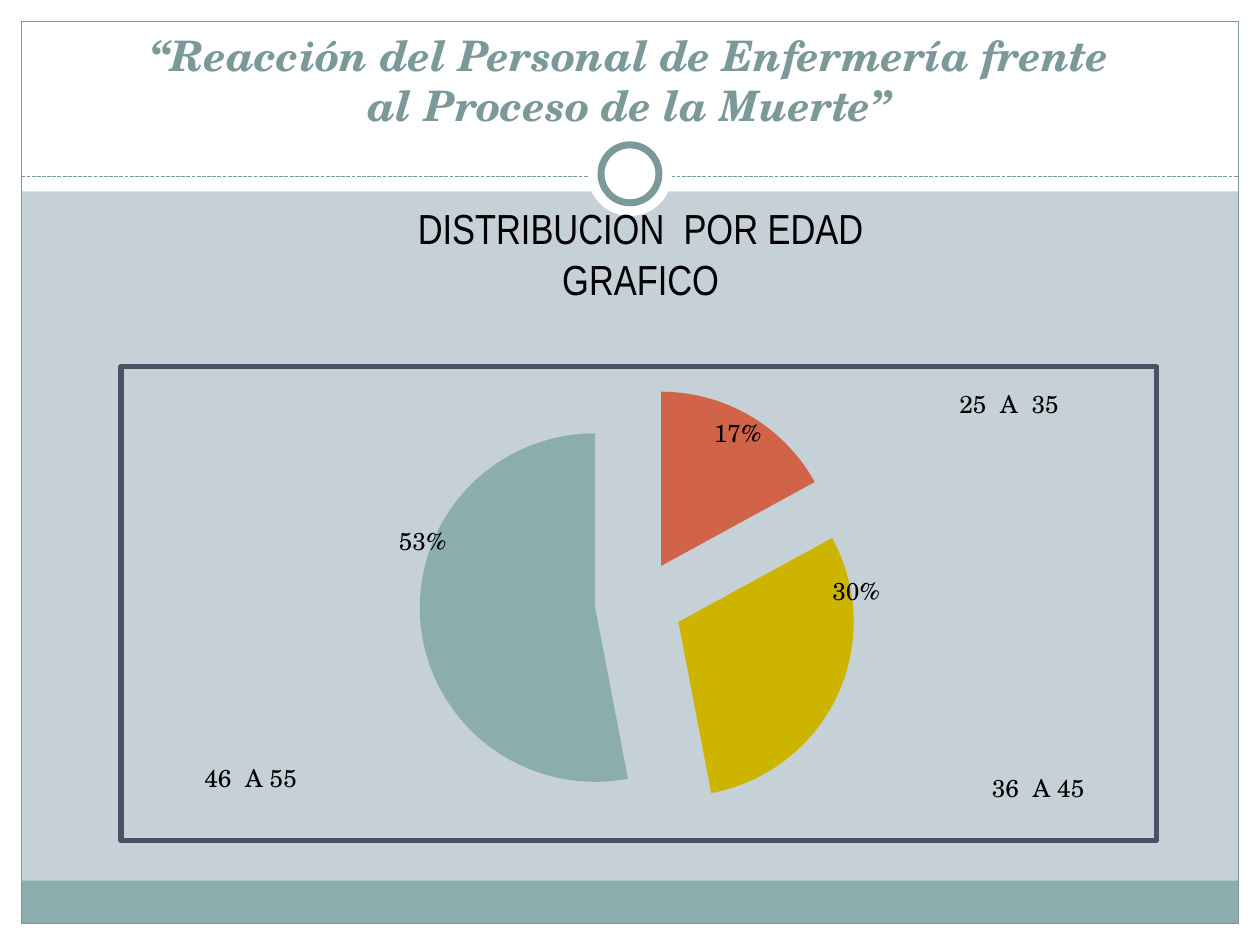
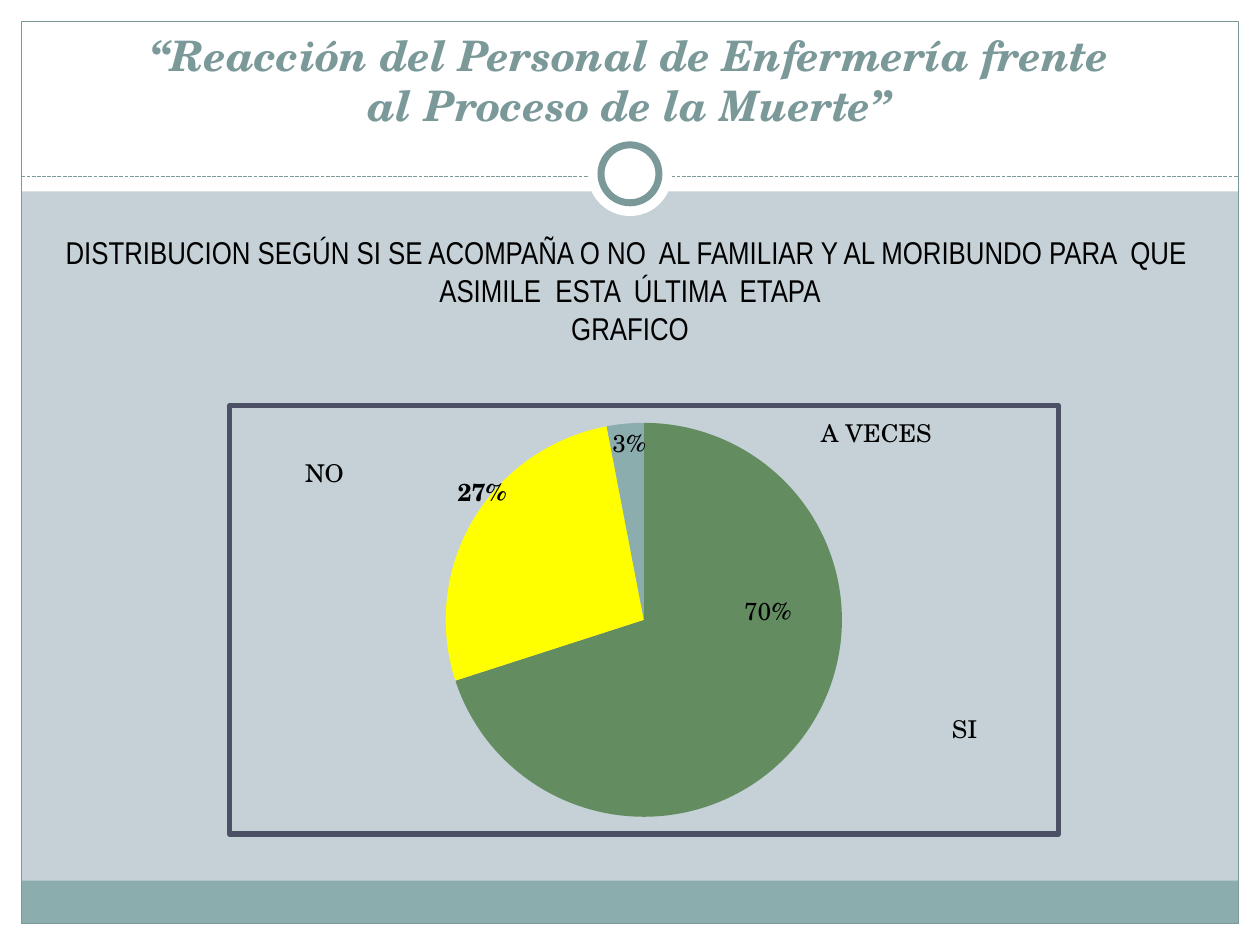
import pptx
import pptx.util
import pptx.chart.data
import pptx.dml.color
import pptx.enum.chart
import pptx.enum.dml
import pptx.enum.shapes
import pptx.enum.text
import pptx.oxml
import pptx.oxml.ns
from dataclasses import dataclass

Inches = pptx.util.Inches
Pt = pptx.util.Pt
qn = pptx.oxml.ns.qn
Kind = pptx.enum.shapes.MSO_SHAPE
Anchor = pptx.enum.text.MSO_ANCHOR

# Content: label entries are (text, left, top, width, bold)
TITLE = "“Reacción del Personal de Enfermería frente\val Proceso de la Muerte”"
SLIDES = [
    {
        "head": ["DISTRIBUCION  POR EDAD", "GRAFICO"],
        "box": (1.02, 1.56, 8.13, 0.91),
        "size": 24,
        "frame": (0.94, 2.89, 8.26, 3.8),
        "parts": [(17, "D16349"), (30, "CCB400"), (53, "8CADAE")],
        "burst": 25,
        "labels": [
            ("53%", 2.73, 4.06, 1.25, False),
            ("30%", 6.17, 4.45, 1.25, False),
            ("17%", 5.23, 3.2, 1.25, False),
            ("25  A  35", 7.11, 2.97, 1.8, False),
            ("36  A 45", 7.34, 6.02, 1.8, False),
            ("46  A 55", 1.09, 5.94, 1.8, False),
        ],
    },
    {
        "head": ["DISTRIBUCION SEGÚN SI SE ACOMPAÑA O NO  AL FAMILIAR Y AL "
                 "MORIBUNDO PARA  QUE  ASIMILE  ESTA  ÚLTIMA  ETAPA", "GRAFICO"],
        "box": (0.39, 1.8, 9.22, 1.01),
        "size": 18,
        "frame": (1.8, 3.2, 6.62, 3.44),
        "parts": [(70, "648C61"), (27, "FFFF00"), (3, "8CADAE")],
        "burst": 0,
        "labels": [
            ("70%", 5.55, 4.61, 1.09, False),
            ("27%", 3.28, 3.67, 1.09, True),
            ("3%", 4.45, 3.28, 1.09, False),
            ("SI", 7.11, 5.55, 1.09, False),
            ("NO", 2.03, 3.52, 1.09, False),
            ("A VECES", 6.41, 3.2, 1.09, False),
        ],
    },
]


@dataclass(frozen=True)
class Theme:
    back: str = "C5D1D7"
    white: str = "FFFFFF"
    band: str = "8CADAE"
    trim: str = "7C999A"
    edge: str = "4B5064"
    ink: str = "000000"
    serif: str = "TeX Gyre Schola"
    sans: str = "Arial Narrow"
    title: int = 24
    label: int = 14
    chart: int = 10


THEME = Theme()
WIDE, HIGH, RIM = 10, 7.5, 0.17


def tint(code):
    return pptx.dml.color.RGBColor.from_string(code)


def place(box):
    return [Inches(v) for v in box]


def style(font, size, name, color, bold=False, slant=False):
    font.size, font.name = Pt(size), name
    font.bold, font.italic = bold, slant
    font.color.rgb = tint(color)


def shape(slide, kind, box, fill=None, line=None, width=0.75):
    item = slide.shapes.add_shape(kind, *place(box))
    item.shadow.inherit = False
    if fill:
        item.fill.solid()
        item.fill.fore_color.rgb = tint(fill)
    else:
        item.fill.background()
    if line:
        item.line.color.rgb = tint(line)
        item.line.width = Pt(width)
    else:
        item.line.fill.background()


def text(slide, box, lines, anchor, *look):
    frame = slide.shapes.add_textbox(*place(box)).text_frame
    frame.word_wrap = True
    frame.vertical_anchor = anchor
    frame.text = "\n".join(lines)
    for para in frame.paragraphs:
        para.alignment = pptx.enum.text.PP_ALIGN.CENTER
        style(para.font, *look)


def base(slide):
    """Background, white margins, footer band, rule, ring and title."""
    slide.background.fill.solid()
    slide.background.fill.fore_color.rgb = tint(THEME.back)
    sides = [(0, HIGH - RIM, WIDE, RIM), (0, 0, WIDE, 1.52),
             (0, 0, RIM, HIGH), (WIDE - RIM, 0, RIM, HIGH)]
    for box in sides:
        shape(slide, Kind.RECTANGLE, box, THEME.white)
    inner = WIDE - 2 * RIM
    shape(slide, Kind.RECTANGLE, (RIM, 6.99, inner, 0.34), THEME.band)
    shape(slide, Kind.RECTANGLE, (RIM, RIM, inner, HIGH - 2 * RIM),
          line=THEME.trim)

    ends = place((RIM, 1.4, WIDE - RIM, 1.4))
    rule = slide.shapes.add_connector(
        pptx.enum.shapes.MSO_CONNECTOR.STRAIGHT, *ends)
    rule.line.color.rgb = tint(THEME.trim)
    rule.line.width = Pt(0.75)
    rule.line.dash_style = pptx.enum.dml.MSO_LINE.SQUARE_DOT
    props = rule._element.spPr
    props.append(props.makeelement(qn("a:effectLst"), {}))

    for size, line in ((0.67, None), (0.46, THEME.trim)):
        box = ((WIDE - size) / 2, 1.38 - size / 2, size, size)
        shape(slide, Kind.OVAL, box, THEME.white, line, 4)
    text(slide, (0.33, 0.25, 9.33, 0.83), [TITLE], Anchor.BOTTOM,
         THEME.title, THEME.serif, THEME.trim, True, True)


def pie(slide, box, parts, burst):
    data = pptx.chart.data.CategoryChartData()
    data.categories = [str(n + 1) for n in range(len(parts))]
    data.add_series("Series 1", [value for value, _ in parts])
    chart = slide.shapes.add_chart(
        pptx.enum.chart.XL_CHART_TYPE.PIE, *place(box), data).chart
    chart.has_title = chart.has_legend = False
    style(chart.font, THEME.chart, THEME.serif, THEME.ink)
    plot = chart.plots[0]
    plot.vary_by_categories = True
    series = plot.series[0]
    for n, (_, color) in enumerate(parts):
        look = series.points[n].format
        look.fill.solid()
        look.fill.fore_color.rgb = tint(color)
        look.line.fill.background()

    # Slices pulled apart
    if burst:
        node = series._element
        gap = node.makeelement(qn("c:explosion"), {"val": str(burst)})
        node.find(qn("c:dPt")).addprevious(gap)

    # Centred plot area
    area = chart._chartSpace.chart.plotArea
    for old in area.findall(qn("c:layout")):
        area.remove(old)
    spots = (("xMode", "edge"), ("yMode", "edge"), ("x", 0.04),
             ("y", 0.04), ("w", 0.92), ("h", 0.92))
    inner = "".join(f'<c:{tag} val="{val}"/>' for tag, val in spots)
    space = pptx.oxml.ns.nsdecls("c", "a")
    area.insert(0, pptx.oxml.parse_xml(
        f'<c:layout {space}><c:manualLayout><c:layoutTarget val="inner"/>'
        f'{inner}</c:manualLayout></c:layout>'))

    # Chart border
    chart._chartSpace.chart.addnext(pptx.oxml.parse_xml(
        f'<c:spPr {space}><a:noFill/><a:ln w="{Pt(3)}"><a:solidFill>'
        f'<a:srgbClr val="{THEME.edge}"/></a:solidFill><a:round/></a:ln>'
        '</c:spPr>'))


def main():
    deck = pptx.Presentation()
    deck.slide_width, deck.slide_height = Inches(WIDE), Inches(HIGH)
    for page in SLIDES:
        slide = deck.slides.add_slide(deck.slide_layouts[6])
        base(slide)
        pie(slide, page["frame"], page["parts"], page["burst"])
        text(slide, page["box"], page["head"], Anchor.TOP,
             page["size"], THEME.sans, THEME.ink)
        for word, left, top, width, bold in page["labels"]:
            text(slide, (left, top, width, 0.47), [word], Anchor.MIDDLE,
                 THEME.label, THEME.serif, THEME.ink, bold)
    deck.save("out.pptx")


if __name__ == "__main__":
    main()
